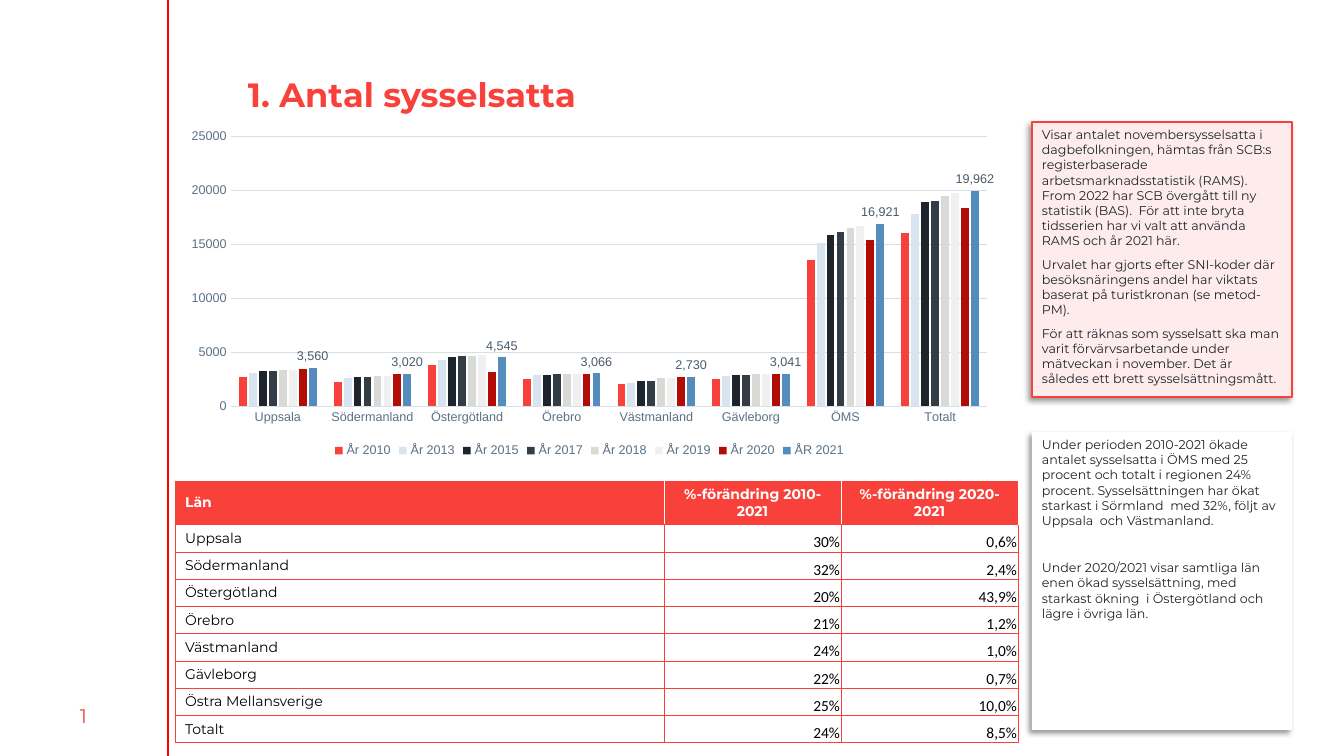
from lxml.etree import SubElement
from pptx import Presentation
from pptx.chart.data import CategoryChartData
from pptx.dml.color import RGBColor
from pptx.enum.chart import XL_CHART_TYPE, XL_LABEL_POSITION, XL_LEGEND_POSITION, XL_TICK_MARK
from pptx.enum.shapes import MSO_CONNECTOR, MSO_SHAPE
from pptx.enum.text import MSO_ANCHOR, PP_ALIGN
from pptx.oxml.ns import qn
from pptx.util import Inches, Pt

RED, INK, GREY, GRID = "F8413A", "1D242B", "5B7187", "D8DEE5"

YEARS = {
    "År 2010": ("F8413A", [2700, 2300, 3800, 2500, 2100, 2500, 13500, 16000]),
    "År 2013": ("D8E5F0", [3100, 2600, 4300, 2900, 2200, 2800, 15100, 17800]),
    "År 2015": ("1D242B", [3300, 2700, 4600, 2900, 2400, 2900, 15900, 18900]),
    "År 2017": ("333D46", [3300, 2700, 4700, 3000, 2400, 2900, 16100, 19000]),
    "År 2018": ("D9D9D6", [3400, 2800, 4700, 3000, 2600, 3000, 16500, 19500]),
    "År 2019": ("F0F0F0", [3400, 2800, 4800, 3000, 2600, 3000, 16700, 19700]),
    "År 2020": ("B10D06", [3500, 3000, 3200, 3000, 2700, 3000, 15400, 18400]),
    "ÅR 2021": ("548DBD", [3560, 3020, 4545, 3066, 2730, 3041, 16921, 19962]),
}
COUNTIES = ["Uppsala", "Södermanland", "Östergötland", "Örebro", "Västmanland", "Gävleborg"]
CHANGES = [
    ("Län", "%-förändring 2010-2021", "%-förändring 2020-2021"),
    ("Uppsala", "30%", "0,6%"),
    ("Södermanland", "32%", "2,4%"),
    ("Östergötland", "20%", "43,9%"),
    ("Örebro", "21%", "1,2%"),
    ("Västmanland", "24%", "1,0%"),
    ("Gävleborg", "22%", "0,7%"),
    ("Östra Mellansverige", "25%", "10,0%"),
    ("Totalt", "24%", "8,5%"),
]
METHOD = [
    "Visar antalet novembersysselsatta i dagbefolkningen, hämtas från SCB:s registerbaserade "
    "arbetsmarknadsstatistik (RAMS). From 2022 har SCB övergått till ny statistik (BAS).  För att "
    "inte bryta tidsserien har vi valt att använda RAMS och år 2021 här.",
    "Urvalet har gjorts efter SNI-koder där besöksnäringens andel har viktats baserat på "
    "turistkronan (se metod-PM).",
    "För att räknas som sysselsatt ska man varit förvärvsarbetande under mätveckan i november. "
    "Det är således ett brett sysselsättningsmått.",
]
FINDINGS = [
    "Under perioden 2010-2021 ökade antalet sysselsatta i ÖMS med 25 procent och totalt i regionen "
    "24% procent. Sysselsättningen har ökat starkast i Sörmland  med 32%, följt av Uppsala  och "
    "Västmanland.",
    "Under 2020/2021 visar samtliga län enen ökad sysselsättning, med starkast ökning  i "
    "Östergötland och lägre i övriga län.",
]


def px(n):
    return Inches(n / 100.8)


def rgb(color):
    return RGBColor.from_string(color)


def set_font(font, size, color, name="Montserrat", bold=False):
    font.size, font.name, font.bold = Pt(size), name, bold
    font.color.rgb = rgb(color)


class SlideBuilder:
    def __init__(self, prs):
        self.slide = prs.slides.add_slide(prs.slide_layouts[5])
        self.shapes = self.slide.shapes

    def title(self, text, *box):
        title = self.shapes.title
        title.left, title.top, title.width, title.height = map(px, box)
        frame = title.text_frame
        frame.text = text
        frame.vertical_anchor = MSO_ANCHOR.TOP
        frame.margin_left = frame.margin_right = frame.margin_top = frame.margin_bottom = px(5)
        frame.paragraphs[0].alignment = PP_ALIGN.LEFT
        set_font(frame.paragraphs[0].font, 24, RED, bold=True)

    def page_number(self, number, *box):
        frame = self.shapes.add_textbox(*map(px, box)).text_frame
        frame.word_wrap = True
        frame.vertical_anchor = MSO_ANCHOR.MIDDLE
        paragraph = frame.paragraphs[0]
        field = SubElement(paragraph._p, qn("a:fld"), type="slidenum",
                           id="{B6F15528-21DE-4FAA-801E-634DDDAF4B2B}")
        SubElement(field, qn("a:rPr"), lang="sv-SE")
        SubElement(field, qn("a:t")).text = number
        paragraph.alignment = PP_ALIGN.CENTER
        set_font(paragraph.font, 14, "F7413A")

    def rule(self, x1, y1, x2, y2, color):
        line = self.shapes.add_connector(MSO_CONNECTOR.STRAIGHT, *map(px, (x1, y1, x2, y2)))
        line.line.color.rgb = rgb(color)
        line.line.width = Pt(0.75)
        SubElement(line._element.spPr, qn("a:effectLst"))

    def note(self, paragraphs, *box, fill, line=None, gap=3):
        shape = self.shapes.add_shape(MSO_SHAPE.RECTANGLE, *map(px, box))
        shape.fill.solid()
        shape.fill.fore_color.rgb = rgb(fill)
        if line:
            shape.line.color.rgb = rgb(line)
            shape.line.width = Pt(1)
        else:
            shape.line.fill.background()
        # Soft shadow down to the left
        shape.shadow.inherit = False
        effects = shape._element.spPr.find(qn("a:effectLst"))
        shadow = SubElement(effects, qn("a:outerShdw"), blurRad=str(Pt(4)), dist=str(Pt(3)),
                            dir=str(135 * 60000), algn="tr", rotWithShape="0")
        black = SubElement(shadow, qn("a:srgbClr"), val="000000")
        SubElement(black, qn("a:alpha"), val="40000")
        frame = shape.text_frame
        frame.word_wrap = True
        frame.vertical_anchor = MSO_ANCHOR.TOP
        for i, text in enumerate(paragraphs):
            paragraph = frame.add_paragraph() if i else frame.paragraphs[0]
            paragraph.text = text
            paragraph.alignment = PP_ALIGN.LEFT
            paragraph.space_before = Pt(gap if i else 0)
            paragraph.space_after = Pt(3)
            set_font(paragraph.font, 9, INK)

    def column_chart(self, categories, series, *box):
        data = CategoryChartData(number_format="0")
        data.categories = categories
        for name, (_, values) in series.items():
            data.add_series(name, values)
        chart = self.shapes.add_chart(XL_CHART_TYPE.COLUMN_CLUSTERED, *map(px, box), data).chart
        set_font(chart.font, 10, INK, "Arial")
        chart.has_title = False
        chart.has_legend = True
        chart.legend.position = XL_LEGEND_POSITION.BOTTOM
        chart.legend.include_in_layout = False
        set_font(chart.legend.font, 9, GREY, "Arial")
        for axis in (chart.category_axis, chart.value_axis):
            axis.major_tick_mark = axis.minor_tick_mark = XL_TICK_MARK.NONE
            set_font(axis.tick_labels.font, 9, GREY, "Arial")
        value_axis = chart.value_axis
        value_axis.minimum_scale, value_axis.maximum_scale, value_axis.major_unit = 0, 25000, 5000
        value_axis.tick_labels.number_format = "0"
        value_axis.tick_labels.number_format_is_linked = False
        value_axis.format.line.fill.background()
        for line in (chart.category_axis.format.line, value_axis.major_gridlines.format.line):
            line.color.rgb = rgb(GRID)
            line.width = Pt(0.75)
        plot = chart.plots[0]
        plot.gap_width, plot.overlap, plot.vary_by_categories = 219, -27, False
        for year, (color, _) in zip(plot.series, series.values()):
            year.format.fill.solid()
            year.format.fill.fore_color.rgb = rgb(color)
        # Only the latest year is labelled
        labels = plot.series[-1].data_labels
        labels.show_value = True
        labels.position = XL_LABEL_POSITION.OUTSIDE_END
        labels.number_format, labels.number_format_is_linked = "#,##0", False
        set_font(labels.font, 9, "495B6C", "Arial")

    def table(self, rows, left, top, widths, head_height, body_height):
        table = self.shapes.add_table(len(rows), len(widths), px(left), px(top), px(sum(widths)),
                                      px(head_height + body_height)).table
        table.first_row = table.horz_banding = False
        for column, width in zip(table.columns, widths):
            column.width = px(width)
        for r, texts in enumerate(rows):
            table.rows[r].height = px(body_height / (len(rows) - 1) if r else head_height)
            for c, text in enumerate(texts):
                self.cell(table.cell(r, c), text, head=r == 0, first=c == 0)

    def cell(self, cell, text, head, first):
        cell.text = text
        cell.vertical_anchor = MSO_ANCHOR.MIDDLE
        paragraph = cell.text_frame.paragraphs[0]
        sides = {"L": RED, "R": RED, "T": RED, "B": RED}
        if head:
            sides["R"] = "FFFFFF"
            sides["L"] = RED if first else "FFFFFF"
        for side, color in sides.items():
            border = SubElement(cell._tc.get_or_add_tcPr(), qn(f"a:ln{side}"), w=str(Pt(0.75)))
            SubElement(SubElement(border, qn("a:solidFill")), qn("a:srgbClr"), val=color)
        if head:
            cell.fill.solid()
            cell.fill.fore_color.rgb = rgb(RED)
            paragraph.alignment = PP_ALIGN.LEFT if first else PP_ALIGN.CENTER
            set_font(paragraph.font, 10, "FFFFFF", bold=True)
            return
        cell.fill.background()
        if first:
            set_font(paragraph.font, 10, "000000")
        else:
            cell.vertical_anchor = MSO_ANCHOR.BOTTOM
            cell.margin_left = cell.margin_right = cell.margin_top = px(1)
            cell.margin_bottom = 0
            paragraph.alignment = PP_ALIGN.RIGHT
            set_font(paragraph.font, 11, "000000", "Calibri")


def main():
    prs = Presentation()
    prs.slide_width, prs.slide_height = px(1344), px(756)
    page = SlideBuilder(prs)
    # Frame and title
    page.page_number("5", 0, 696, 167, 40)
    page.rule(168, 0, 168, 756, "FF0000")
    page.title("1. Antal sysselsatta", 243, 69, 1020, 90)
    # Change per county
    page.table(CHANGES, 175, 481, (489, 177, 177), 44, 218)
    # Notes on method and findings
    page.note(METHOD, 1032, 122, 260, 275, fill="FEECEC", line="F7413A")
    page.note(FINDINGS, 1032, 432, 260, 298, fill="FFFFFF", gap=20)
    # Employment by county and year
    page.column_chart(COUNTIES + ["ÖMS", "Totalt"], YEARS, 175, 122, 829, 340)
    prs.save("out.pptx")


if __name__ == "__main__":
    main()
